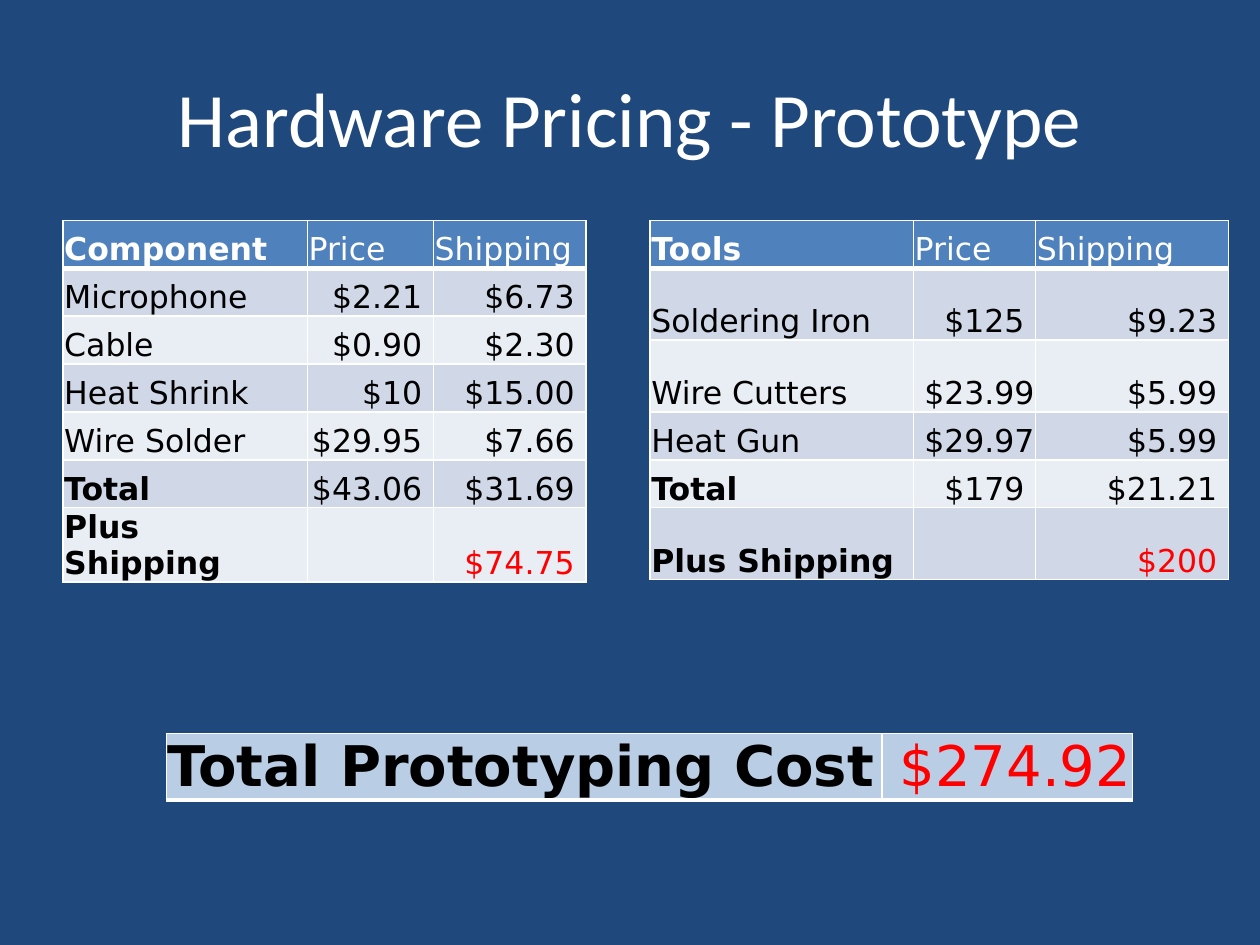
from lxml.etree import SubElement as Sub
from pptx import Presentation
from pptx.dml.color import RGBColor as Rgb
from pptx.enum.text import MSO_ANCHOR as Anchor, PP_ALIGN as Align
from pptx.oxml.ns import qn
from pptx.util import Inches, Pt

HUES = {
    "back": "1F497D", "white": "FFFFFF", "black": "000000", "red": "FF0000",
    "head": "4F81BD", "odd": "D0D8E8", "even": "E9EDF4", "sum": "B9CDE5",
}
BOLD = ("Component", "Tools", "Total", "Plus Shipping", "Total Prototyping Cost")

PARTS = [
    ("Component", "Price", "Shipping"),
    ("Microphone", "$2.21", "$6.73"),
    ("Cable", "$0.90", "$2.30"),
    ("Heat Shrink", "$10", "$15.00"),
    ("Wire Solder", "$29.95", "$7.66"),
    ("Total", "$43.06", "$31.69"),
    ("Plus Shipping", "", "$74.75"),
]
TOOLS = [
    ("Tools", "Price", "Shipping"),
    ("Soldering Iron", "$125", "$9.23"),
    ("Wire Cutters", "$23.99", "$5.99"),
    ("Heat Gun", "$29.97", "$5.99"),
    ("Total", "$179", "$21.21"),
    ("Plus Shipping", "", "$200"),
]
COST = [("Total Prototyping Cost", "$274.92")]


def hue(name):
    return Rgb.from_string(HUES[name])


def write(frame, text, size=18, font="DejaVu Sans", color="black", bold=False,
          align=Align.LEFT):
    par = frame.paragraphs[0]
    par.alignment = align
    run = par.add_run()
    run.text = text
    run.font.size = Pt(size)
    run.font.name = font
    run.font.bold = bold
    run.font.color.rgb = hue(color)


class Deck:
    def __init__(self):
        self.show = Presentation()
        self.show.slide_width = Inches(10)
        self.show.slide_height = Inches(7.5)
        self.slide = self.show.slides.add_slide(self.show.slide_layouts[5])
        fill = self.slide.background.fill
        fill.solid()
        fill.fore_color.rgb = hue("back")

    def title(self, text, left, top, width, height):
        box = self.slide.shapes.title
        box.left, box.top = Inches(left), Inches(top)
        box.width, box.height = Inches(width), Inches(height)
        box.text_frame.vertical_anchor = Anchor.MIDDLE
        write(box.text_frame, text, size=44, font="Calibri", color="white",
              align=Align.CENTER)

    def edge(self, cell, **sides):
        props = cell._tc.get_or_add_tcPr()
        for side, width in sides.items():
            line = Sub(props, qn(f"a:ln{side}"), w=str(Pt(width)))
            Sub(Sub(line, qn("a:solidFill")), qn("a:srgbClr"), val=HUES["white"])

    def cell(self, cell, text, fill, top, base, **style):
        cell.margin_left = cell.margin_right = cell.margin_top = Inches(0.01)
        cell.margin_bottom = 0
        cell.vertical_anchor = Anchor.BOTTOM
        self.edge(cell, L=1, R=1, T=top, B=base)
        cell.fill.solid()
        cell.fill.fore_color.rgb = hue(fill)
        if text:
            write(cell.text_frame, text, **style)

    def table(self, data, left, top, cols, rows, head=True, size=18):
        spot = [Inches(n) for n in (left, top, sum(cols), sum(rows))]
        grid = self.slide.shapes.add_table(len(rows), len(cols), *spot).table
        grid.first_row = grid.horz_banding = False
        for col, width in zip(grid.columns, cols):
            col.width = Inches(width)
        for row, height in zip(grid.rows, rows):
            row.height = Inches(height)
        for r, line in enumerate(data):
            first = head and r == 0
            fill = "head" if first else ("even", "odd")[r % 2] if head else "sum"
            for c, text in enumerate(line):
                money = text.startswith("$")
                final = money and line is data[-1] and c == len(line) - 1
                self.cell(
                    grid.cell(r, c), text + " " if money else text, fill,
                    top=3 if head and r == 1 else 1,
                    base=3 if r == 0 else 1,
                    size=size, bold=text in BOLD,
                    color="white" if first else "red" if final else "black",
                    align=Align.RIGHT if money else Align.LEFT)


def main():
    deck = Deck()
    deck.title("Hardware Pricing - Prototype", 0.5, 0.3, 9, 1.25)
    low, high = 0.38, 0.57
    deck.table(PARTS, 0.5, 1.75, (1.94, 1, 1.21), [low] * 6 + [high])
    deck.table(TOOLS, 5.16, 1.75, (2.09, 0.97, 1.53),
               (low, high, high, low, low, high))
    deck.table(COST, 1.32, 5.82, (5.68, 1.99), [0.27], head=False, size=32)
    deck.show.save("out.pptx")


if __name__ == "__main__":
    main()
